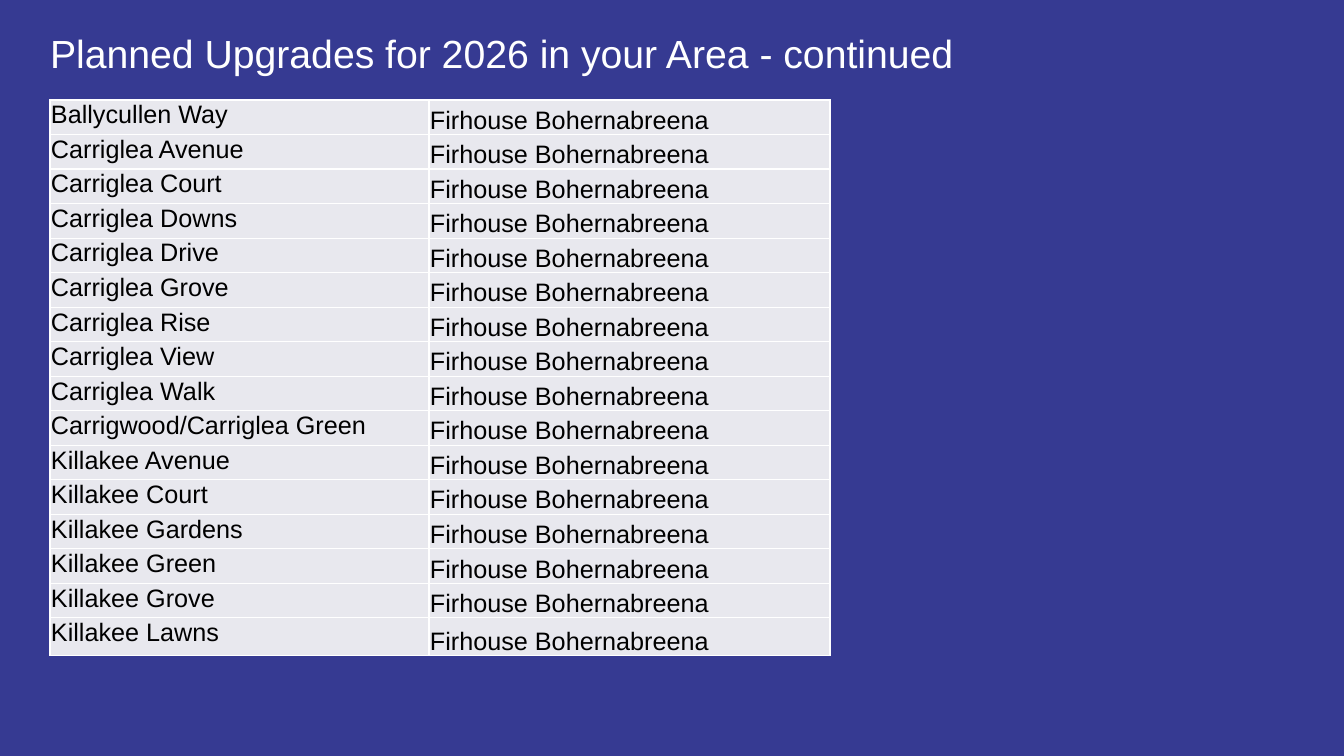
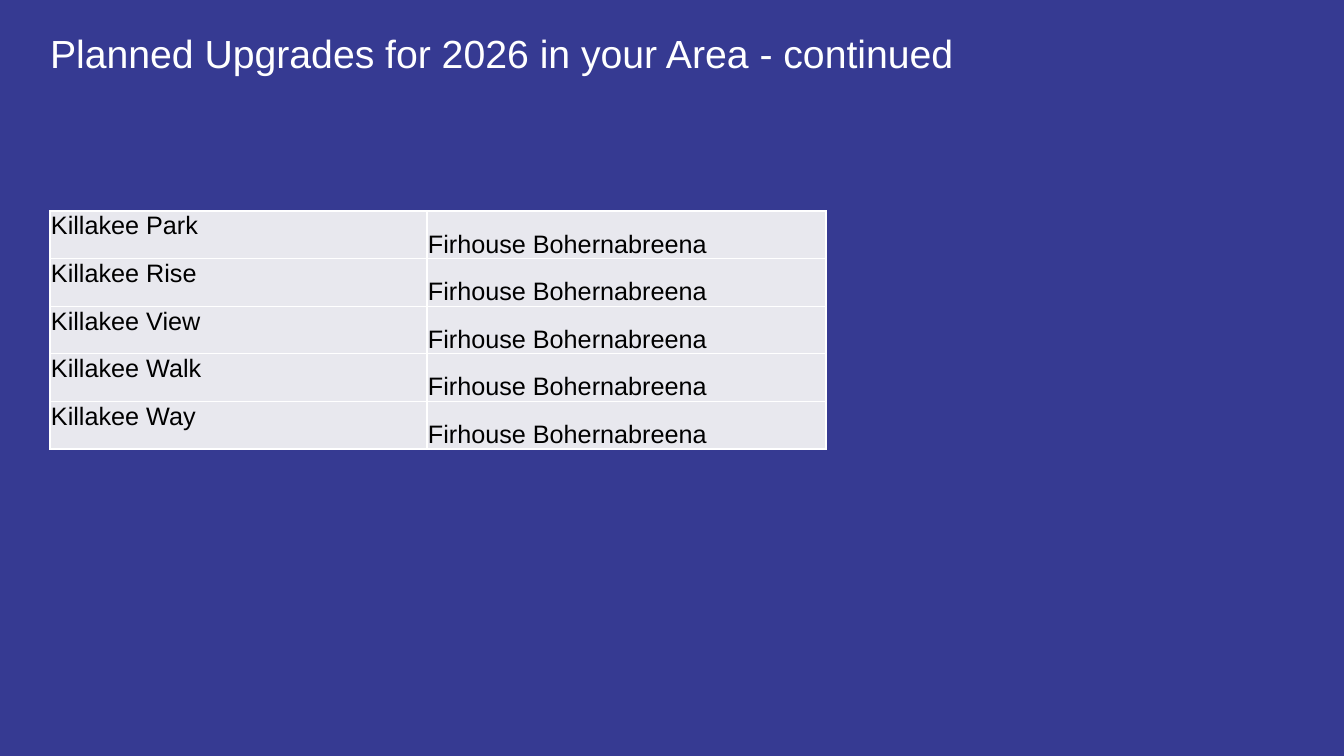
from lxml.etree import SubElement
from pptx import Presentation
from pptx.dml.color import RGBColor as Rgb
from pptx.enum.text import MSO_ANCHOR as Anchor
from pptx.oxml.ns import qn
from pptx.util import Pt

PX = 914400 / 100.8
FONT = "Arial"
COLORS = {"background": "363A92", "title": "FFFFFF", "text": "000000",
          "cell": "E8E8EE", "border": "FFFFFF"}
TITLE = "Planned Upgrades for 2026 in your Area - continued"
AREA = "Firhouse Bohernabreena"
LEFT = 50
PAGES = [
    {"top": 100, "columns": (379, 401), "height": 553, "last_extra": 3,
     "roads": ["Ballycullen Way", "Carriglea Avenue", "Carriglea Court",
               "Carriglea Downs", "Carriglea Drive", "Carriglea Grove",
               "Carriglea Rise", "Carriglea View", "Carriglea Walk",
               "Carrigwood/Carriglea Green", "Killakee Avenue",
               "Killakee Court", "Killakee Gardens", "Killakee Green",
               "Killakee Grove", "Killakee Lawns"]},
    {"top": 211, "columns": (377, 399), "height": 238, "last_extra": 0,
     "roads": ["Killakee Park", "Killakee Rise", "Killakee View",
               "Killakee Walk", "Killakee Way"]},
]


def px(value):
    return round(value * PX)


def style_text(frame, size, color):
    font = frame.paragraphs[0].runs[0].font
    font.name, font.size = FONT, Pt(size)
    font.color.rgb = Rgb.from_string(COLORS[color])


def add_title(page):
    box = page.shapes.add_textbox(px(LEFT), px(29), px(1244), px(71))
    frame = box.text_frame
    frame.word_wrap = True
    frame.margin_left = frame.margin_top = 0
    frame.margin_right = frame.margin_bottom = 0
    frame.text = TITLE
    style_text(frame, 28, "title")


def add_borders(cell):
    props = cell._tc.get_or_add_tcPr()
    for index, side in enumerate(("a:lnL", "a:lnR", "a:lnT", "a:lnB")):
        line = props.makeelement(qn(side), {"w": str(Pt(1))})
        fill = SubElement(line, qn("a:solidFill"))
        SubElement(fill, qn("a:srgbClr"), val=COLORS["border"])
        props.insert(index, line)


def fill_cell(cell, text, anchor):
    cell.margin_left = cell.margin_right = cell.margin_top = px(1)
    cell.margin_bottom = 0
    cell.vertical_anchor = anchor
    cell.fill.solid()
    cell.fill.fore_color.rgb = Rgb.from_string(COLORS["cell"])
    cell.text_frame.text = text
    style_text(cell.text_frame, 18, "text")
    add_borders(cell)


def add_road_table(page, top, columns, height, last_extra, roads):
    frame = page.shapes.add_table(len(roads), len(columns), px(LEFT), px(top),
                                  px(sum(columns)), px(height + last_extra))
    table = frame.table
    table.first_row = table.horz_banding = False
    for column, width in zip(table.columns, columns):
        column.width = px(width)
    for row, road in zip(table.rows, roads):
        row.height = px(height / len(roads))
        fill_cell(row.cells[0], road, Anchor.TOP)
        fill_cell(row.cells[1], AREA, Anchor.BOTTOM)
    table.rows[len(roads) - 1].height += px(last_extra)


def main():
    """Build the road upgrade slides."""
    deck = Presentation()
    deck.slide_width, deck.slide_height = px(1344), px(756)
    backdrop = deck.slide_master.background.fill
    backdrop.solid()
    backdrop.fore_color.rgb = Rgb.from_string(COLORS["background"])
    for content in PAGES:
        page = deck.slides.add_slide(deck.slide_layouts[6])
        add_title(page)
        add_road_table(page, **content)
    deck.save("out.pptx")


if __name__ == "__main__":
    main()
